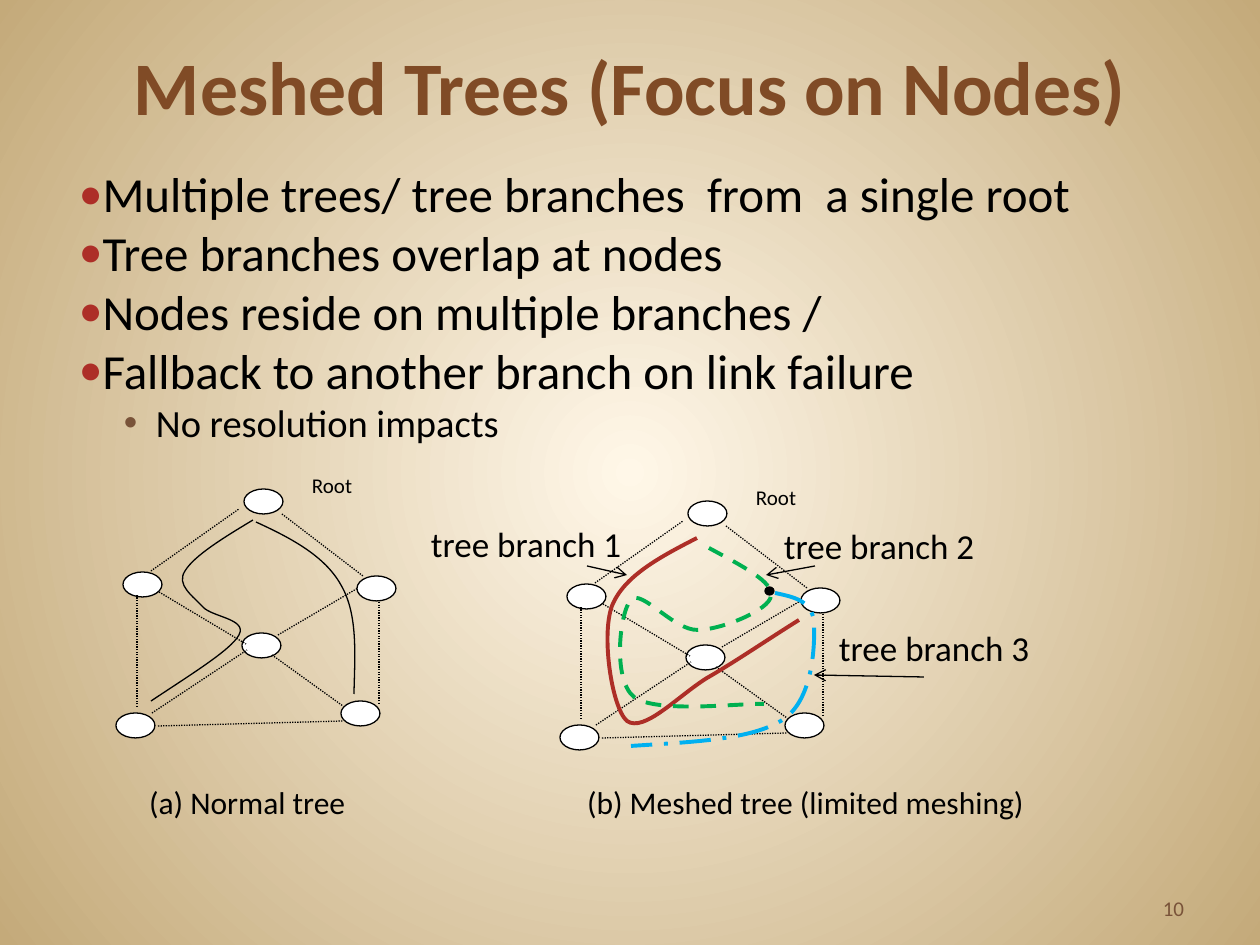
from pptx import Presentation
from pptx.dml.color import RGBColor
from pptx.enum.dml import MSO_LINE as Dash
from pptx.enum.shapes import MSO_CONNECTOR as Link, MSO_SHAPE as Shape
from pptx.enum.text import MSO_ANCHOR as Anchor, PP_ALIGN as Align
from pptx.oxml.ns import qn
from pptx.oxml.xmlchemy import OxmlElement as Element
from pptx.util import Emu, Pt

PX = 914400 / 126
BLACK = RGBColor(0x00, 0x00, 0x00)
WHITE = RGBColor(0xFF, 0xFF, 0xFF)
CREAM = RGBColor(0xFF, 0xF7, 0xE8)
SAND = RGBColor(0xC4, 0xAA, 0x7A)
SIENNA = RGBColor(0x80, 0x4B, 0x26)
UMBER = RGBColor(0x79, 0x53, 0x39)
RED = RGBColor(0xAD, 0x2E, 0x27)
GREEN = RGBColor(0x00, 0xB0, 0x50)
BLUE = RGBColor(0x00, 0xB0, 0xF0)

TITLE = "Meshed Trees (Focus on Nodes)"
POINTS = [
    "Multiple trees/ tree branches  from  a single root",
    "Tree branches overlap at nodes",
    "Nodes reside on multiple branches /",
    "Fallback to another branch on link failure",
]
SUBPOINT = "No resolution impacts"
CAPTION = "(a) Normal tree\t(b) Meshed tree (limited meshing)"
CAPTION_TAB = 438

MESH_OFFSETS = [(0, 0), (444, 12)]
NODE_SIZE = (39, 25)
NODES = [(244, 489), (357, 576), (123, 572), (242, 633), (116, 713), (341, 701)]
LINKS = [
    (151, 571, 239, 509), (282, 514, 363, 576), (159, 592, 246, 644),
    (137, 707, 137, 595), (158, 726, 343, 721), (272, 655, 343, 706),
    (278, 635, 358, 588), (379, 602, 379, 704), (152, 713, 247, 650),
]
ROOT_BOX = (312, 473, 103, 52)

BRANCHES = [
    (BLACK, 0.75, None, [
        (253, 520), (223, 538), (194, 556), (185, 571), (176, 585), (193, 596), (203, 607),
        (212, 617), (248, 619), (239, 635), (231, 650), (190, 675), (151, 701)]),
    (BLACK, 0.75, None, [
        (256, 522), (291, 538), (325, 556), (341, 585), (358, 614), (355, 654), (354, 694)]),
    (RED, 2.25, None, [
        (697, 538), (660, 557), (624, 576), (612, 606), (601, 636), (612, 708), (627, 721),
        (644, 733), (678, 696), (707, 678), (735, 662), (767, 640), (799, 620)]),
    (BLUE, 2.25, Dash.LONG_DASH_DOT, [
        (775, 593), (793, 597), (811, 600), (814, 621), (815, 643), (814, 698), (784, 719),
        (753, 740), (692, 742), (631, 746)]),
    (GREEN, 2.25, Dash.DASH, [
        (709, 548), (742, 566), (774, 582), (771, 596), (770, 610), (721, 630), (698, 630),
        (674, 631), (641, 588), (631, 600), (620, 611), (612, 679), (634, 697),
        (656, 714), (742, 703), (764, 704)]),
]
BRANCH_LABELS = [
    ("tree branch 1", (431, 523), (587, 566, 627, 575)),
    ("tree branch 2", (784, 525), (815, 566, 766, 575)),
    ("tree branch 3", (839, 627), (924, 677, 814, 675)),
]
LABEL_SIZE = (231, 48)
JUNCTION = (765, 587, 9, 8)


def px(*lengths):
    """Turn pixel lengths into EMU."""
    return [Emu(round(length * PX)) for length in lengths]


def add_child(parent, tag, **attributes):
    """Append an XML element with the given attributes."""
    child = Element(tag)
    for key, value in attributes.items():
        child.set(key, str(value))
    parent.append(child)
    return child


def style_line(line, color, width, dash=None):
    """Set colour, width and dash of a line."""
    line.color.rgb = color
    line.width = Pt(width)
    if dash:
        line.dash_style = dash


def write(paragraph, text, size, color=BLACK, bold=False):
    """Fill a paragraph with one formatted run."""
    run = paragraph.add_run()
    run.text = text
    run.font.color.rgb = color
    formats = {"name": "Calibri", "size": Pt(size), "bold": bold}
    for key, value in formats.items():
        setattr(run.font, key, value)


def add_text(shapes, box, inset=(0, 0), anchor=Anchor.TOP):
    """Add an empty wrapped text frame."""
    frame = shapes.add_textbox(*px(*box)).text_frame
    side, edge = px(*inset)
    formats = {"word_wrap": True, "vertical_anchor": anchor, "margin_left": side,
               "margin_right": side, "margin_top": edge, "margin_bottom": edge}
    for key, value in formats.items():
        setattr(frame, key, value)
    return frame


def add_bullet(paragraph, mark, color, margin, indent, percent):
    """Give a paragraph a coloured bullet and a hanging indent."""
    props = paragraph._p.get_or_add_pPr()
    left, hang = px(margin, indent)
    props.set("marL", str(left))
    props.set("indent", str(hang))
    add_child(add_child(props, "a:buClr"), "a:srgbClr", val=color)
    add_child(props, "a:buSzPct", val=percent * 1000)
    add_child(props, "a:buFont", typeface="Arial")
    add_child(props, "a:buChar", char=mark)


def add_ellipse(shapes, box, fill):
    """Add an outlined ellipse."""
    ellipse = shapes.add_shape(Shape.OVAL, *px(*box))
    ellipse.shadow.inherit = False
    ellipse.fill.solid()
    ellipse.fill.fore_color.rgb = fill
    style_line(ellipse.line, BLACK, 0.75)


def add_line(shapes, ends, dash=None, arrow=False):
    """Add a thin straight line, with an arrowhead if asked."""
    connector = shapes.add_connector(Link.STRAIGHT, *px(*ends))
    style_line(connector.line, BLACK, 0.75, dash)
    if arrow:
        add_child(connector.line._get_or_add_ln(), "a:tailEnd", type="arrow")
    add_child(connector._element.spPr, "a:effectLst")


def add_curve(shapes, color, width, dash, points):
    """Add an open curve of cubic segments."""
    builder = shapes.build_freeform(*points[0], scale=PX)
    builder.add_line_segments(points[1:], close=False)
    curve = builder.convert_to_shape()
    curve.shadow.inherit = False
    curve.fill.background()
    style_line(curve.line, color, width, dash)
    steps = list(curve._element.iter(qn("a:lnTo")))
    outline = steps[0].getparent()
    for start in range(0, len(steps), 3):
        cubic = add_child(outline, "a:cubicBezTo")
        for step in steps[start:start + 3]:
            cubic.append(step[0])
            outline.remove(step)


def paint_background(slide):
    """Fill the background with a round gradient."""
    fill = slide.background.fill
    fill.gradient()
    for stop, color, position in zip(fill.gradient_stops, (CREAM, SAND), (0, 1)):
        stop.color.rgb = color
        stop.position = position
    linear = next(slide.background._cSld.iter(qn("a:lin")))
    circle = Element("a:path")
    circle.set("path", "circle")
    add_child(circle, "a:fillToRect", l=50000, t=50000, r=50000, b=50000)
    linear.getparent().replace(linear, circle)


def main():
    """Build the slide."""
    deck = Presentation()
    deck.slide_width, deck.slide_height = px(1260, 945)
    slide = deck.slides.add_slide(deck.slide_layouts[6])
    shapes = slide.shapes
    paint_background(slide)

    title = add_text(shapes, (63, 42, 1134, 95), (13, 6), Anchor.BOTTOM).paragraphs[0]
    title.alignment = Align.CENTER
    write(title, TITLE, 43.2, SIENNA, True)

    body = add_text(shapes, (73, 158, 1134, 305), (6, 6))
    for index, point in enumerate(POINTS):
        paragraph = body.add_paragraph() if index else body.paragraphs[0]
        add_bullet(paragraph, "●", RED, 0, -38, 80)
        write(paragraph, point, 28)
    paragraph = body.add_paragraph()
    paragraph.level = 1
    add_bullet(paragraph, "•", UMBER, 77, -32, 100)
    write(paragraph, SUBPOINT, 22)

    caption = add_text(shapes, (136, 777, 915, 53), (13, 6)).paragraphs[0]
    tabs = add_child(caption._p.get_or_add_pPr(), "a:tabLst")
    add_child(tabs, "a:tab", pos=px(CAPTION_TAB)[0], algn="l")
    write(caption, CAPTION, 18)

    for dx, dy in MESH_OFFSETS:
        for x, y in NODES:
            add_ellipse(shapes, (x + dx, y + dy, *NODE_SIZE), WHITE)
        for x1, y1, x2, y2 in LINKS:
            add_line(shapes, (x1 + dx, y1 + dy, x2 + dx, y2 + dy), Dash.ROUND_DOT)
        x, y, width, height = ROOT_BOX
        root = add_text(shapes, (x + dx, y + dy, width, height))
        write(root.paragraphs[0], "Root", 12)

    for branch in BRANCHES:
        add_curve(shapes, *branch)
    for label, corner, arrow in BRANCH_LABELS:
        write(add_text(shapes, (*corner, *LABEL_SIZE)).paragraphs[0], label, 20)
        add_line(shapes, arrow, arrow=True)
    add_ellipse(shapes, JUNCTION, BLACK)

    number = add_text(shapes, (903, 861, 294, 66), (13, 6), Anchor.BOTTOM).paragraphs[0]
    number.alignment = Align.RIGHT
    write(number, "10", 12, UMBER)
    deck.save("out.pptx")


if __name__ == "__main__":
    main()
